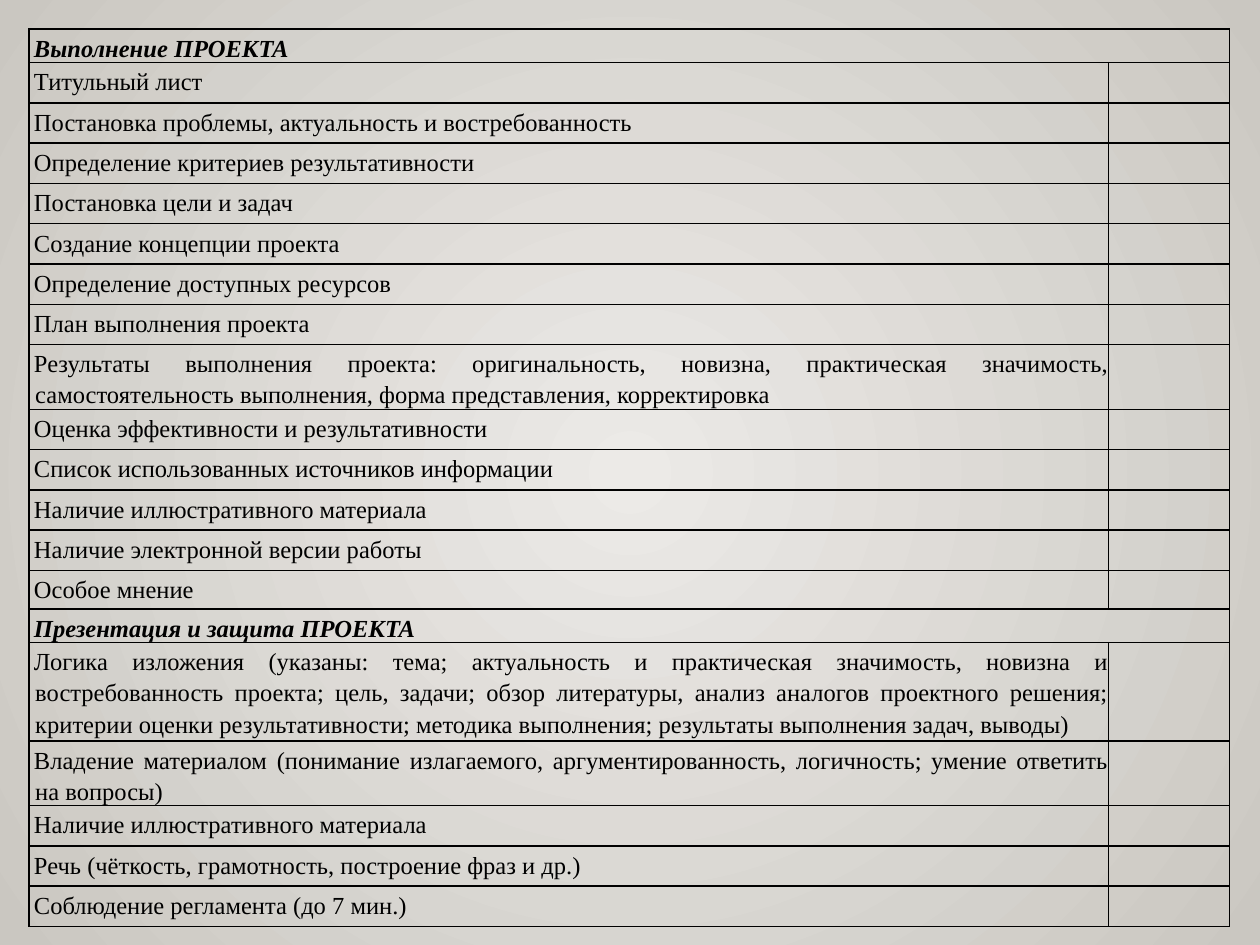
from lxml.etree import SubElement
from pptx import Presentation
from pptx.dml.color import RGBColor
from pptx.enum.text import PP_ALIGN
from pptx.oxml import parse_xml
from pptx.oxml.ns import qn
from pptx.util import Inches, Pt

COLORS = {"ink": "000000", "center": "ECEAE7", "edge": "CAC7C1"}
FONT = "Times New Roman"
SECTIONS = [
    ("Выполнение ПРОЕКТА", [
        ("Титульный лист", 0.32),
        ("Постановка проблемы, актуальность и востребованность", 0.32),
        ("Определение критериев результативности", 0.32),
        ("Постановка цели и задач", 0.32),
        ("Создание концепции проекта", 0.32),
        ("Определение доступных ресурсов", 0.32),
        ("План выполнения проекта", 0.32),
        ("Результаты выполнения проекта: оригинальность, новизна, практическая значимость, "
         "самостоятельность выполнения, форма представления, корректировка", 0.51),
        ("Оценка эффективности и результативности", 0.32),
        ("Список использованных источников информации", 0.32),
        ("Наличие иллюстративного материала", 0.32),
        ("Наличие электронной версии работы", 0.32),
        ("Особое мнение", 0.3),
    ]),
    ("Презентация и защита ПРОЕКТА", [
        ("Логика изложения (указаны: тема; актуальность и практическая значимость, новизна и "
         "востребованность проекта; цель, задачи; обзор литературы, анализ аналогов проектного "
         "решения; критерии оценки результативности; методика выполнения; результаты выполнения "
         "задач, выводы)", 0.78),
        ("Владение материалом (понимание излагаемого, аргументированность, логичность; "
         "умение ответить на вопросы)", 0.51),
        ("Наличие иллюстративного материала", 0.32),
        ("Речь (чёткость, грамотность, построение фраз и др.)", 0.32),
        ("Соблюдение регламента (до 7 мин.)", 0.32),
    ]),
]
HEAD = 0.26
WIDTHS = [8.57, 0.96]
NS = 'xmlns:a="http://schemas.openxmlformats.org/drawingml/2006/main"'


def write(cell, text, size=14, head=False):
    cell.margin_left, cell.margin_top = Inches(0.04), Inches(0.02)
    para = cell.text_frame.paragraphs[0]
    para.alignment = PP_ALIGN.JUSTIFY
    para.line_spacing = 1.15
    props = para._p.get_or_add_pPr()
    props.set("marL", str(Inches(0.01)))
    props.set("indent", str(-Inches(0.01)))
    run = para.add_run()
    run.text = text
    font = run.font
    font.name, font.size = FONT, Pt(size)
    font.bold = font.italic = head
    font.color.rgb = RGBColor.from_string(COLORS["ink"])


def frame(cell):
    cell.margin_left = cell.margin_right = cell.margin_top = cell.margin_bottom = 0
    props = cell._tc.get_or_add_tcPr()
    for side in ("lnL", "lnR", "lnT", "lnB"):
        line = SubElement(props, qn(f"a:{side}"), w=str(Pt(1)))
        fill = SubElement(line, qn("a:solidFill"))
        SubElement(fill, qn("a:srgbClr"), val=COLORS["ink"])
    cell.fill.background()


def paint(slide):
    fill = slide.background.fill
    fill.gradient()
    for stop, key in zip(fill.gradient_stops, ("center", "edge")):
        stop.color.rgb = RGBColor.from_string(COLORS[key])
    grad = slide._element.find(".//" + qn("a:gradFill"))
    radial = parse_xml(f'<a:path {NS} path="circle"><a:fillToRect l="50000" t="50000" '
                       'r="50000" b="50000"/></a:path>')
    grad.replace(grad.find(qn("a:lin")), radial)


def main():
    deck = Presentation()
    deck.slide_width, deck.slide_height = Inches(10), Inches(7.5)
    slide = deck.slides.add_slide(deck.slide_layouts[6])
    paint(slide)
    rows = []
    for title, items in SECTIONS:
        rows.append((title, HEAD, True))
        rows += [(text, height, False) for text, height in items]
    total = sum(height for _, height, _ in rows)
    table = slide.shapes.add_table(len(rows), 2, Inches(0.23), Inches(0.23),
                                   Inches(sum(WIDTHS)), Inches(total)).table
    table.first_row = table.horz_banding = False
    for column, width in zip(table.columns, WIDTHS):
        column.width = Inches(width)
    for i, (text, height, head) in enumerate(rows):
        table.rows[i].height = Inches(height)
        left, right = table.cell(i, 0), table.cell(i, 1)
        frame(left)
        frame(right)
        if head:
            left.merge(right)
        write(left, text, head=head)
    deck.save("out.pptx")


if __name__ == "__main__":
    main()
